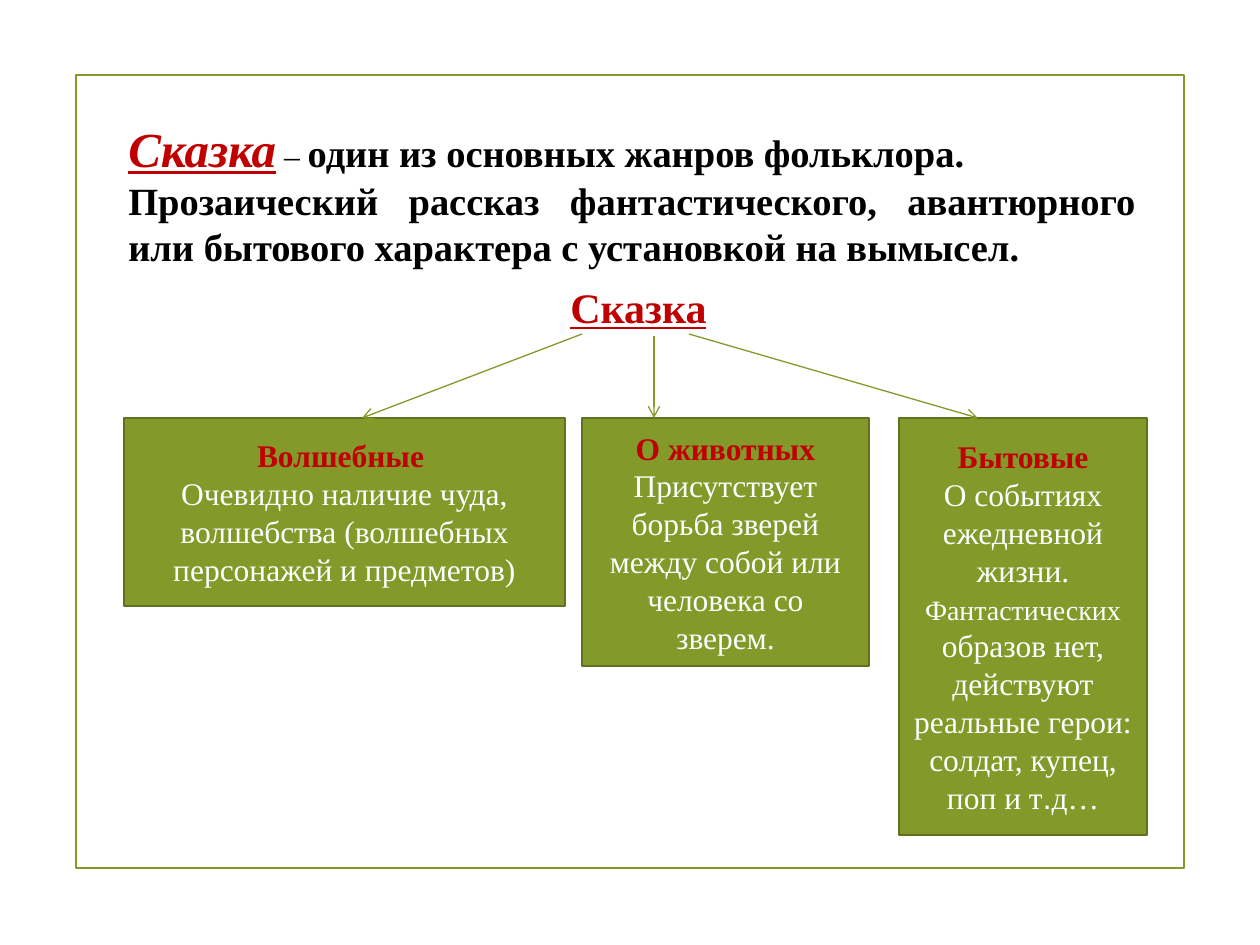
from lxml import etree
from pptx import Presentation
from pptx import util as u
from pptx.dml.color import RGBColor
from pptx.enum import shapes, text
from pptx.oxml import ns

SCALE = 914400 / 126  # EMU per px
FONT = "Times New Roman"
GREEN, DARK_GREEN = "83992A", "61711F"
RED, BLACK, WHITE = "C00000", "000000", "FFFFFF"
CENTER, JUSTIFY = text.PP_ALIGN.CENTER, text.PP_ALIGN.JUSTIFY
BOX_TOP = 418


def px(*values):
    return [u.Emu(round(v * SCALE)) for v in values]


def color(hex_code):
    return RGBColor.from_string(hex_code)


def style(font, size, hex_code, bold=False, italic=False, underline=False, name=FONT):
    font.name, font.size = name, u.Pt(size)
    font.color.rgb = color(hex_code)
    font.bold, font.italic, font.underline = bold, italic, underline


def add_paragraph(tf, first, align, runs, **look):
    """Runs are (text, overrides) pairs on top of the paragraph's look."""
    p = tf.paragraphs[0] if first else tf.add_paragraph()
    p.alignment = align
    style(p.font, **look)
    for words, overrides in runs:
        r = p.add_run()
        r.text = words
        if overrides:
            style(r.font, **{**look, **overrides})


def add_text_box(s, *box):
    tf = s.shapes.add_textbox(*px(*box)).text_frame
    tf.word_wrap = True
    return tf


def add_rect(s, box, line, fill=None):
    sp = s.shapes.add_shape(shapes.MSO_SHAPE.RECTANGLE, *px(*box))
    sp.shadow.inherit = False
    if fill:
        sp.fill.solid()
        sp.fill.fore_color.rgb = color(fill)
    else:
        sp.fill.background()
    sp.line.color.rgb = color(line)
    sp.line.width = u.Pt(1.25)
    return sp


def add_kind(s, left, width, height, title, runs):
    """A box with a red title and a white description."""
    tf = add_rect(s, (left, BOX_TOP, width, height), DARK_GREEN, GREEN).text_frame
    tf.word_wrap = True
    tf.vertical_anchor = text.MSO_ANCHOR.MIDDLE
    add_paragraph(tf, True, CENTER, [(title, {})], size=18, hex_code=RED, bold=True)
    add_paragraph(tf, False, CENTER, runs, size=18, hex_code=WHITE)


def add_arrow(s, x1, y1, x2):
    c = s.shapes.add_connector(shapes.MSO_CONNECTOR.STRAIGHT, *px(x1, y1, x2, BOX_TOP))
    c.line.color.rgb = color(GREEN)
    c.line.width = u.Pt(0.75)
    etree.SubElement(c.line._get_or_add_ln(), ns.qn("a:tailEnd"), type="arrow")
    etree.SubElement(c._element.spPr, ns.qn("a:effectLst"))


def main():
    prs = Presentation()
    prs.slide_width, prs.slide_height = u.Inches(10), u.Inches(7.5)
    s = prs.slides.add_slide(prs.slide_layouts[6])

    # Frame
    add_rect(s, (76, 75, 1108, 793), GREEN)

    # Definition
    tf = add_text_box(s, 116, 112, 1032, 165)
    bold = dict(size=22, hex_code=BLACK, bold=True)
    add_paragraph(tf, True, JUSTIFY, [
        ("Сказка", dict(size=28, hex_code=RED, italic=True, underline=True)),
        (" – ", dict(size=18, bold=False)),
        ("один из основных жанров фольклора. ", {}),
    ], **bold)
    add_paragraph(tf, False, JUSTIFY, [
        ("Прозаический рассказ фантастического, авантюрного или бытового "
         "характера с установкой на вымысел.", {}),
    ], **bold)

    # Root of the diagram
    add_paragraph(add_text_box(s, 430, 275, 417, 63), True, CENTER, [("Сказка", {})],
                  size=24, hex_code=RED, bold=True, underline=True)

    # Kinds of tale
    add_kind(s, 124, 441, 188, "Волшебные ", [
        ("Очевидно наличие чуда, волшебства (волшебных персонажей и предметов)", {}),
    ])
    add_kind(s, 582, 287, 248, "О животных", [
        ("Присутствует борьба зверей между собой или человека со зверем.", {}),
    ])
    add_kind(s, 899, 248, 417, "Бытовые", [
        ("О событиях ежедневной жизни. ", {}),
        ("Фантастических", dict(size=16)),
        (" образов нет, действуют реальные герои: солдат, купец, поп и т", {}),
        (".", dict(name="Arial")),
        ("д…", {}),
    ])

    # Arrows from the root to each kind
    for start_x, start_y, end_x in ((689, 334, 978), (654, 336, 654), (582, 334, 362)):
        add_arrow(s, start_x, start_y, end_x)

    prs.save("out.pptx")


if __name__ == "__main__":
    main()
